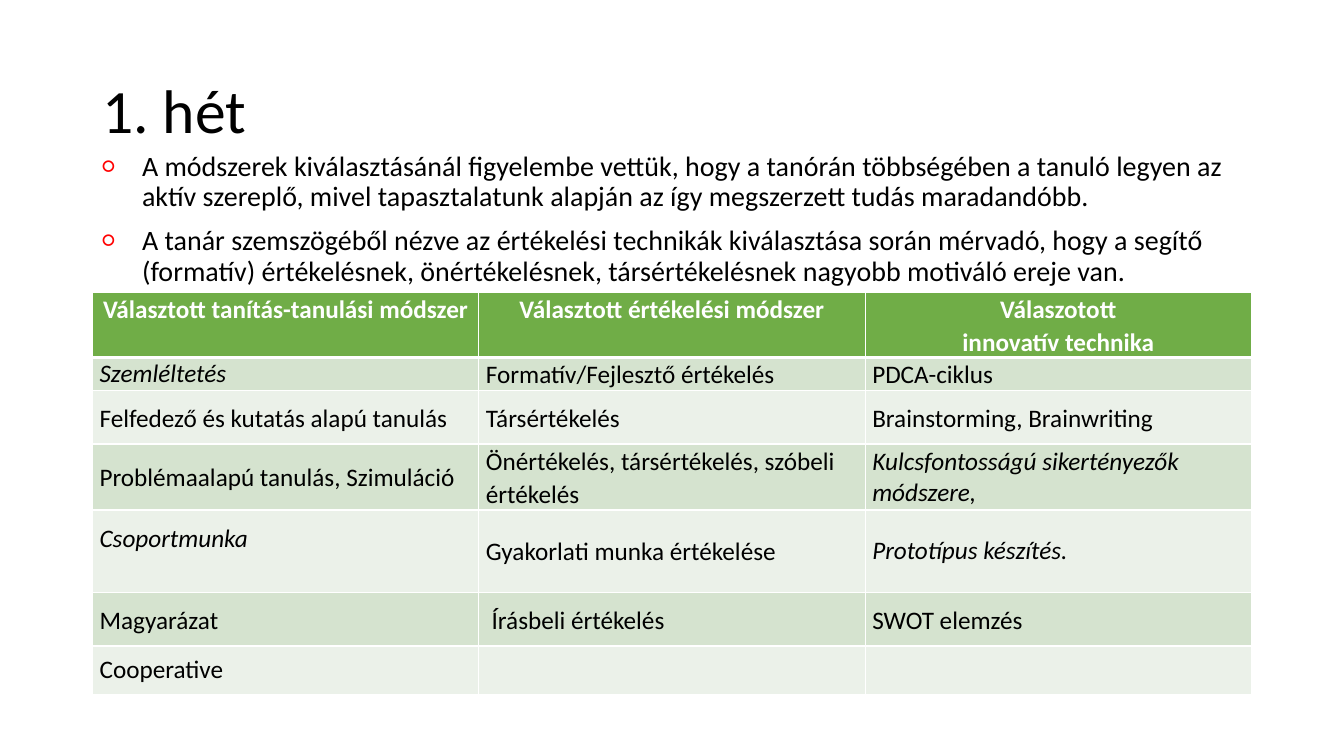
from lxml import etree
from pptx import Presentation
from pptx import util as u
from pptx.dml.color import RGBColor
from pptx.enum import text
from pptx.oxml import ns

BLACK = RGBColor(0x00, 0x00, 0x00)
WHITE = RGBColor(0xFF, 0xFF, 0xFF)
RED = RGBColor(0xFF, 0x00, 0x00)
GREEN = RGBColor(0x70, 0xAD, 0x47)
BANDS = RGBColor(0xD5, 0xE3, 0xCF), RGBColor(0xEB, 0xF1, 0xE9)

LEFT, WIDTH = 2.33, 29.21
ROW_HEIGHTS = [1.64, 0.83, 1.35, 1.66, 2.08, 1.35, 1.22]

POINTS = [
    "A módszerek kiválasztásánál figyelembe vettük, hogy a tanórán többségében a tanuló "
    "legyen az aktív szereplő, mivel tapasztalatunk alapján az így megszerzett tudás maradandóbb.",
    "A tanár szemszögéből nézve az értékelési technikák kiválasztása során mérvadó, hogy a "
    "segítő (formatív) értékelésnek, önértékelésnek, társértékelésnek nagyobb motiváló ereje van.",
]
METHODS = [
    ["Választott tanítás-tanulási módszer", "Választott értékelési módszer",
     "Válaszotott\ninnovatív technika"],
    ["Szemléltetés", "Formatív/Fejlesztő értékelés", "PDCA-ciklus"],
    ["Felfedező és kutatás alapú tanulás", "Társértékelés", "Brainstorming, Brainwriting"],
    ["Problémaalapú tanulás, Szimuláció", "Önértékelés, társértékelés, szóbeli értékelés",
     "Kulcsfontosságú sikertényezők módszere,"],
    ["Csoportmunka", "Gyakorlati munka értékelése", "Prototípus készítés."],
    ["Magyarázat", " Írásbeli értékelés", "SWOT elemzés"],
    ["Cooperative", "", ""],
]
ITALIC = {(1, 0), (3, 2), (4, 0), (4, 2)}
SINGLE_SPACED = {(1, 0), (3, 2), (4, 2), (6, 0)}
RAISED = (4, 0)


def add_element(parent, tag, **attributes):
    return etree.SubElement(parent, ns.qn(tag), attributes)


class SlideBuilder:
    font_name = "Calibri"

    def __init__(self, presentation):
        self.slide = presentation.slides.add_slide(presentation.slide_layouts[6])

    def style(self, paragraph, size, color=BLACK, spacing=0.9, bold=False, italic=False):
        paragraph.line_spacing = spacing
        for run in paragraph.runs:
            font = run.font
            font.name, font.size = self.font_name, u.Pt(size)
            font.bold, font.italic = bold, italic
            font.color.rgb = color

    def text_box(self, content, top, height, size, anchor):
        box = self.slide.shapes.add_textbox(u.Cm(LEFT), u.Cm(top), u.Cm(WIDTH), u.Cm(height))
        frame = box.text_frame
        frame.word_wrap = True
        frame.vertical_anchor = anchor
        frame.text = content
        for paragraph in frame.paragraphs:
            self.style(paragraph, size)
        return frame

    def title(self, content):
        self.text_box(content, 1.02, 3.68, 44, text.MSO_ANCHOR.MIDDLE)

    def bullets(self, points):
        frame = self.text_box("\n".join(points), 3.71, 13.46, 20, text.MSO_ANCHOR.TOP)
        for index, paragraph in enumerate(frame.paragraphs):
            if index:
                paragraph.space_before = u.Pt(10)
            properties = paragraph._p.get_or_add_pPr()
            properties.set("marL", str(u.Cm(1)))
            properties.set("indent", str(-u.Cm(1)))
            add_element(add_element(properties, "a:buClr"), "a:srgbClr", val=str(RED))
            add_element(properties, "a:buSzPct", val="80000")
            add_element(properties, "a:buFont", typeface=self.font_name)
            add_element(properties, "a:buChar", char="○")

    def borders(self, cell, row):
        """Draw white cell borders, thicker between the header and the first row."""
        widths = {"L": 1, "R": 1, "T": 3 if row == 1 else 1, "B": 3 if row == 0 else 1}
        properties = cell._tc.get_or_add_tcPr()
        for side, width in widths.items():
            line = add_element(properties, f"a:ln{side}", w=str(u.Pt(width)))
            add_element(add_element(line, "a:solidFill"), "a:srgbClr", val=str(WHITE))

    def cell(self, cell, row, column, content):
        header = row == 0
        self.borders(cell, row)
        cell.fill.solid()
        cell.fill.fore_color.rgb = GREEN if header else BANDS[(row - 1) % 2]
        cell.margin_left = cell.margin_right = u.Cm(0.18)
        cell.margin_top = 0
        cell.margin_bottom = u.Cm(0.66 if (row, column) == RAISED else 0)
        cell.vertical_anchor = text.MSO_ANCHOR.TOP if header else text.MSO_ANCHOR.MIDDLE
        cell.text_frame.text = content
        spacing = 1.0 if (row, column) in SINGLE_SPACED else 1.07
        for paragraph in cell.text_frame.paragraphs:
            paragraph.alignment = text.PP_ALIGN.CENTER if header else text.PP_ALIGN.LEFT
            self.style(paragraph, 18, WHITE if header else BLACK, spacing,
                       bold=header, italic=(row, column) in ITALIC)

    def table(self, rows, heights, top):
        table = self.slide.shapes.add_table(
            len(rows), len(rows[0]), u.Cm(LEFT), u.Cm(top), u.Cm(WIDTH), u.Cm(sum(heights))).table
        for row, (contents, height) in enumerate(zip(rows, heights)):
            table.rows[row].height = u.Cm(height)
            for column, content in enumerate(contents):
                self.cell(table.cell(row, column), row, column, content)


def main():
    presentation = Presentation()
    presentation.slide_width, presentation.slide_height = u.Cm(33.87), u.Cm(19.05)
    builder = SlideBuilder(presentation)
    builder.title("1. hét")
    builder.bullets(POINTS)
    builder.table(METHODS, ROW_HEIGHTS, top=7.37)
    presentation.save("out.pptx")


if __name__ == "__main__":
    main()
